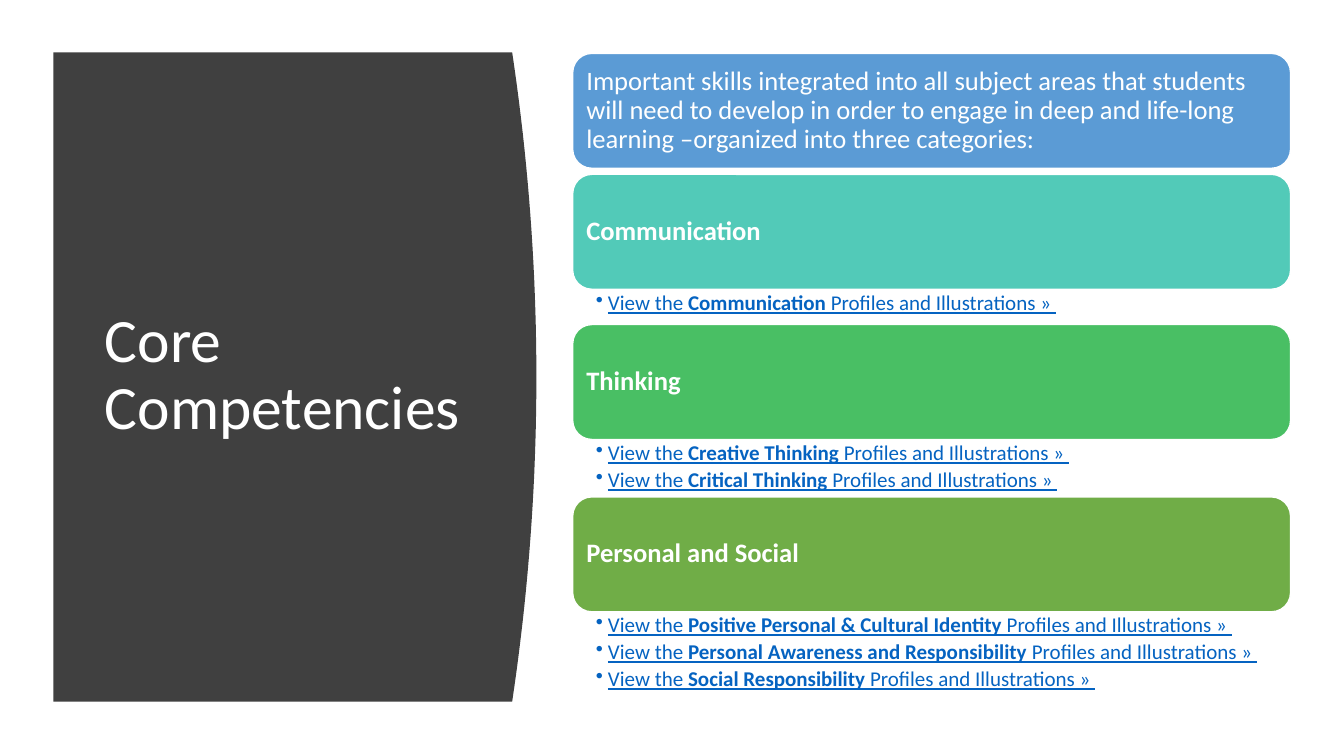
import pptx
import pptx.util
import pptx.dml.color
import pptx.enum.shapes
import pptx.enum.text
import pptx.oxml.ns
from lxml import etree

Inches = pptx.util.Inches
RGBColor = pptx.dml.color.RGBColor
ANCHOR = pptx.enum.text.MSO_ANCHOR

WHITE = RGBColor(0xFF, 0xFF, 0xFF)
DARK = RGBColor(0x40, 0x40, 0x40)
LINK = RGBColor(0x05, 0x63, 0xC1)
BLUE = RGBColor(0x5B, 0x9B, 0xD5)
TEAL = RGBColor(0x52, 0xCA, 0xB8)
GREEN = RGBColor(0x49, 0xBF, 0x64)
OLIVE = RGBColor(0x70, 0xAD, 0x47)

CARD = 1.14
GAP = 0.06
INTRO = (
    "Important skills integrated into all subject areas that students will need "
    "to develop in order to engage in deep and life-long learning "
    "–organized into three categories:"
)
GROUPS = [
    ("Communication", TEAL, 0.35, ["Communication"]),
    ("Thinking", GREEN, 0.57, ["Creative Thinking", "Critical Thinking"]),
    ("Personal and Social", OLIVE, 0.86, [
        "Positive Personal & Cultural Identity",
        "Personal Awareness and Responsibility",
        "Social Responsibility",
    ]),
]


def write(para, text, size=19, color=WHITE, bold=False, under=False):
    """Add a formatted run to a left-aligned paragraph."""
    para.alignment = pptx.enum.text.PP_ALIGN.LEFT
    para.line_spacing = 0.9
    run = para.add_run()
    run.text = text
    font = run.font
    font.name = "Calibri"
    font.size = pptx.util.Pt(size)
    font.color.rgb = color
    font.bold = bold
    font.underline = under


def setup(frame, left, top, right, bottom, anchor):
    """Set wrapping, insets and anchor of a text frame."""
    frame.word_wrap = True
    frame.margin_left, frame.margin_top = Inches(left), Inches(top)
    frame.margin_right, frame.margin_bottom = Inches(right), Inches(bottom)
    frame.vertical_anchor = anchor


def bullet(para):
    """Give a paragraph a hanging round bullet."""
    props = para._p.get_or_add_pPr()
    props.set("marL", str(Inches(0.12)))
    props.set("indent", str(-Inches(0.12)))
    mark = etree.SubElement(props, pptx.oxml.ns.qn("a:buChar"))
    mark.set("char", "•")


def panel(slide, left, top, width, height, bulge=0.24, steps=40):
    """Draw the dark panel whose right side bows outward."""
    edge = left + width - bulge
    curve = []
    for step in range(steps + 1):
        part = step / steps
        bow = 4 * bulge * part * (1 - part)
        curve.append((Inches(edge + bow), Inches(top + height * part)))
    form = slide.shapes.build_freeform(Inches(left), Inches(top))
    form.add_line_segments(curve + [(Inches(left), Inches(top + height))])
    shape = form.convert_to_shape()
    shape.shadow.inherit = False
    shape.fill.solid()
    shape.fill.fore_color.rgb = DARK
    shape.line.fill.background()


def heading(slide, left, top, width, height):
    """Place the slide title over the panel."""
    title = slide.shapes.title
    title.left, title.top = Inches(left), Inches(top)
    title.width, title.height = Inches(width), Inches(height)
    setup(title.text_frame, 0.1, 0.05, 0.1, 0.05, ANCHOR.MIDDLE)
    title.text_frame.auto_size = pptx.enum.text.MSO_AUTO_SIZE.NONE
    write(title.text_frame.paragraphs[0], "Core Competencies", size=44)
    slide.shapes._spTree.append(title._element)


def card(slide, left, top, width, text, color, bold=False):
    """Draw a rounded card holding its text."""
    shape = slide.shapes.add_shape(
        pptx.enum.shapes.MSO_SHAPE.ROUNDED_RECTANGLE,
        Inches(left), Inches(top), Inches(width), Inches(CARD))
    shape.shadow.inherit = False
    shape.fill.solid()
    shape.fill.fore_color.rgb = color
    shape.line.color.rgb = WHITE
    shape.line.width = pptx.util.Pt(1)
    setup(shape.text_frame, 0.08, 0.08, 0.08, 0.08, ANCHOR.MIDDLE)
    write(shape.text_frame.paragraphs[0], text, bold=bold)


def links(slide, left, top, width, height, names):
    """List the profile links below a card."""
    box = slide.shapes.add_textbox(
        Inches(left), Inches(top), Inches(width), Inches(height))
    frame = box.text_frame
    setup(frame, 0.23, 0.03, 0.15, 0.03, ANCHOR.TOP)
    for row, name in enumerate(names):
        para = frame.add_paragraph() if row else frame.paragraphs[0]
        para.level = 1
        para.space_before = pptx.util.Pt(0)
        para.space_after = pptx.util.Pt(3)
        look = dict(size=15, color=LINK, under=True)
        write(para, "View the ", **look)
        write(para, name, bold=True, **look)
        write(para, " Profiles and Illustrations » ", **look)
        bullet(para)


def stack(slide, left, top, width):
    """Stack the intro card and the three groups."""
    card(slide, left, top, width, INTRO, BLUE)
    top += CARD + GAP
    for name, color, height, names in GROUPS:
        card(slide, left, top, width, name, color, bold=True)
        links(slide, left, top + CARD, width, height, names)
        top += CARD + height


def main():
    """Build and save the slide."""
    deck = pptx.Presentation()
    deck.slide_width, deck.slide_height = Inches(13.33), Inches(7.5)
    slide = deck.slides.add_slide(deck.slide_layouts[5])
    panel(slide, 0.53, 0.52, 4.79, 6.44)
    heading(slide, 0.94, 1.11, 3.74, 5.24)
    stack(slide, 5.68, 0.53, 7.12)
    deck.save("out.pptx")


if __name__ == "__main__":
    main()
